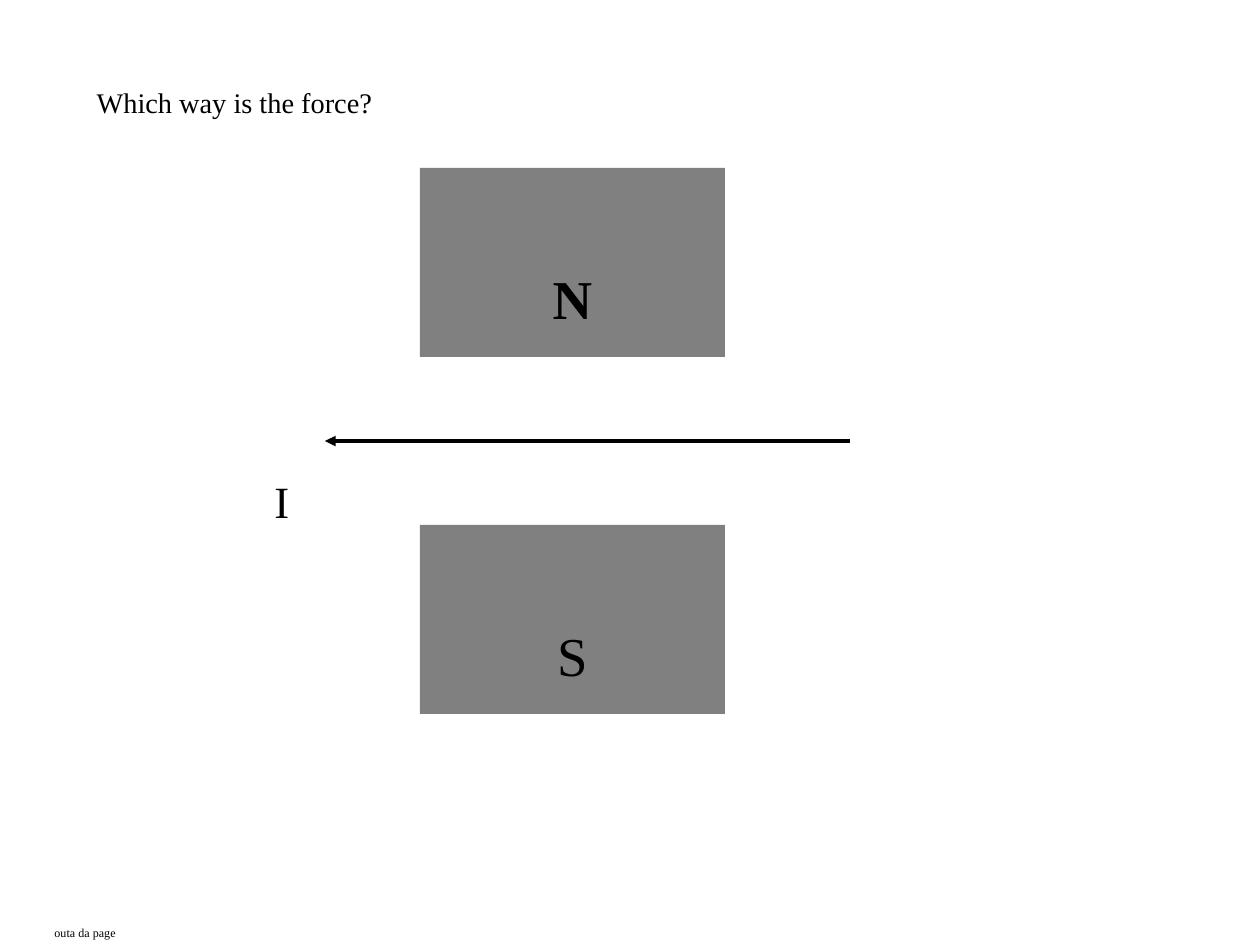
from dataclasses import dataclass

from lxml import etree
from pptx import Presentation
from pptx import util as u
from pptx.dml.color import RGBColor
from pptx.enum import shapes, text
from pptx.oxml.ns import qn

PX_PER_INCH = 126


@dataclass(frozen=True)
class Theme:
    font: str = "Times New Roman"
    ink: RGBColor = RGBColor(0, 0, 0)
    magnet: RGBColor = RGBColor(0x80, 0x80, 0x80)
    title: int = 28
    note: int = 12
    symbol: int = 44
    pole: int = 54
    wire: int = 2
    baseline: int = -33000  # lowered, reduced lettering (1/1000 %)


THEME = Theme()


def px(length):
    return u.Emu(round(length * 914400 / PX_PER_INCH))


def write(shape, words, size, align=text.PP_ALIGN.LEFT, bold=False):
    frame = shape.text_frame
    frame.text = words
    frame.word_wrap = False
    para = frame.paragraphs[0]
    para.alignment = align
    span = para.runs[0]
    span.font.name = THEME.font
    span.font.size = u.Pt(size)
    span.font.bold = bold
    span.font.color.rgb = THEME.ink
    span.font._element.set("baseline", str(THEME.baseline))


def fit_label(shape, words, size):
    write(shape, words, size)
    shape.text_frame.vertical_anchor = text.MSO_ANCHOR.TOP
    shape.text_frame.auto_size = text.MSO_AUTO_SIZE.SHAPE_TO_FIT_TEXT


def add_title(page, left, top, width, height):
    title = page.shapes.title
    title.left, title.top = px(left), px(top)
    title.width, title.height = px(width), px(height)
    fit_label(title, "Which way is the force?", THEME.title)


def add_label(page, words, size, left, top, width, height):
    box = page.shapes.add_textbox(px(left), px(top), px(width), px(height))
    fit_label(box, words, size)


def add_pole(page, letter, bold, left, top, width, height):
    pole = page.shapes.add_shape(shapes.MSO_SHAPE.RECTANGLE, px(left), px(top),
                                 px(width), px(height))
    pole.shadow.inherit = False
    pole.fill.solid()
    pole.fill.fore_color.rgb = THEME.magnet
    pole.line.fill.background()
    write(pole, letter, THEME.pole, text.PP_ALIGN.CENTER, bold)
    pole.text_frame.vertical_anchor = text.MSO_ANCHOR.MIDDLE


def add_current(page, start, end, level):
    wire = page.shapes.add_connector(shapes.MSO_CONNECTOR.STRAIGHT, px(start),
                                     px(level), px(end), px(level))
    wire.line.color.rgb = THEME.ink
    wire.line.width = u.Pt(THEME.wire)
    etree.SubElement(wire.line._get_or_add_ln(), qn("a:tailEnd"), type="triangle")
    etree.SubElement(wire._element.spPr, qn("a:effectLst"))


def add_magnet(page, left, top, width, height, pole_height):
    # Poles at the top and bottom of the box
    add_pole(page, "N", True, left, top, width, pole_height)
    add_pole(page, "S", False, left, top + height - pole_height, width, pole_height)
    # Current midway between the poles
    add_current(page, left + 430, left - 95, top + height // 2)


def main():
    deck = Presentation()
    deck.slide_width, deck.slide_height = px(1260), px(945)
    page = deck.slides.add_slide(deck.slide_layouts[5])

    # Question, footer note and current symbol
    add_title(page, 84, 42, 501, 72)
    add_label(page, "outa da page", THEME.note, 42, 903, 132, 38)
    add_label(page, "I", THEME.symbol, 262, 410, 50, 105)

    # Magnet with the current passing through its gap
    add_magnet(page, 420, 168, 305, 546, 189)

    deck.save("out.pptx")


if __name__ == "__main__":
    main()
